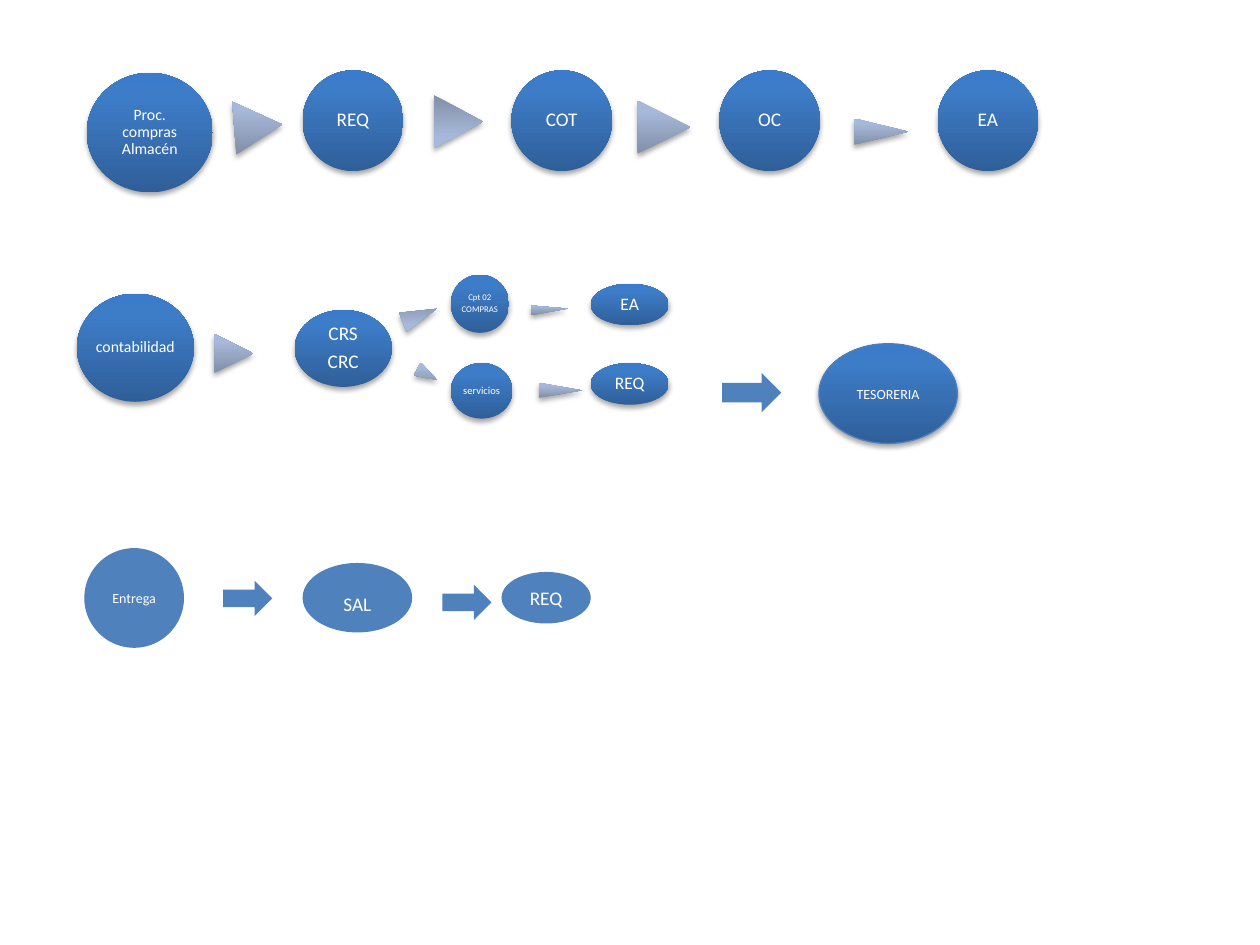
from lxml.etree import SubElement
from pptx import Presentation
from pptx.dml.color import RGBColor
from pptx.enum.shapes import MSO_SHAPE
from pptx.enum.text import MSO_ANCHOR, PP_ALIGN
from pptx.oxml import parse_xml
from pptx.oxml.ns import nsdecls, qn
from pptx.util import Cm, Pt

WHITE = RGBColor(0xFF, 0xFF, 0xFF)
BLACK = RGBColor(0x00, 0x00, 0x00)
BLUE = RGBColor(0x4F, 0x81, 0xBD)
OUTLINE = RGBColor(0x4B, 0x7E, 0xBC)
NODE_SHADES = (
    (0, RGBColor(0x2F, 0x5F, 0x99)),
    (80, RGBColor(0x3D, 0x7C, 0xC7)),
    (100, RGBColor(0x3A, 0x7C, 0xCB)),
)
POINTER_SHADES = (
    (0, RGBColor(0x81, 0x8F, 0xA8)),
    (80, RGBColor(0xA7, 0xB9, 0xDA)),
    (100, RGBColor(0xA7, 0xBA, 0xDC)),
)

STAGE_SIZE = 2.03
STAGE_TOP = 1.42
STAGES = (("REQ", 6.1), ("COT", 10.31), ("OC", 14.5), ("EA", 18.9))

GLOSSY_NODES = (
    (["Proc. compras Almacén"], (1.75, 1.47, 2.54, 2.41), 9),
    *(([name], (left, STAGE_TOP, STAGE_SIZE, STAGE_SIZE), 11) for name, left in STAGES),
    (["contabilidad"], (1.55, 5.92, 2.36, 2.18), 9),
    (["CRS", "CRC"], (5.94, 6.25, 1.96, 1.55), 11),
    (["Cpt 02", "COMPRAS"], (9.09, 5.54, 1.17, 1.17), 5),
    (["servicios"], (9.09, 7.32, 1.24, 1.12), 6),
    (["EA"], (11.91, 5.72, 1.57, 0.84), 10),
    (["REQ"], (11.91, 7.32, 1.57, 0.84), 10),
)

POINTERS = (
    ((4.67, 2.06, 1.07, 0.97), 85.5, False),
    ((8.71, 1.96, 1.07, 0.99), 270, True),
    ((12.85, 2.03, 1.07, 1.07), 90, False),
    ((17.5, 2.11, 0.53, 1.09), 90, False),
    ((4.32, 6.73, 0.79, 0.79), 90, False),
    ((8.26, 5.99, 0.41, 0.74), 248.5, True),
    ((8.46, 7.32, 0.3, 0.46), 118.9, False),
    ((10.97, 5.87, 0.2, 0.74), 87.2, False),
    ((11.15, 7.44, 0.3, 0.86), 90, False),
)

FLAT_NODES = (
    ("Entrega", (1.7, 11.05, 2.01, 2.01), 8, 0.03),
    ("SAL", (6.1, 11.35, 2.21, 1.4), 11, 0.27),
    ("REQ", (10.11, 11.53, 1.8, 1.04), 11, 0.03),
)

ARROWS = (
    (MSO_SHAPE.DOWN_ARROW, (14.76, 7.32, 0.79, 1.19), 270),
    (MSO_SHAPE.RIGHT_ARROW, (4.5, 11.71, 0.99, 0.71), 0),
    (MSO_SHAPE.RIGHT_ARROW, (8.92, 11.79, 0.99, 0.71), 0),
)


def add_flat(slide, kind, box, rotation=0):
    shape = slide.shapes.add_shape(kind, *(Cm(length) for length in box))
    shape.rotation = rotation
    shape.fill.solid()
    shape.fill.fore_color.rgb = BLUE
    shape.line.fill.background()
    shape.shadow.inherit = False
    return shape


def add_glossy(slide, kind, box, shades, rotation=0):
    shape = add_flat(slide, kind, box, rotation)
    properties = shape.element.spPr
    stops = "".join(
        f'<a:gs pos="{position * 1000}"><a:srgbClr val="{color}"/></a:gs>'
        for position, color in shades
    )
    gradient = parse_xml(
        f'<a:gradFill {nsdecls("a")} rotWithShape="0"><a:gsLst>{stops}</a:gsLst>'
        '<a:lin ang="16200000" scaled="0"/></a:gradFill>'
    )
    properties.replace(properties.find(qn("a:solidFill")), gradient)
    shadow = SubElement(
        properties.find(qn("a:effectLst")), qn("a:outerShdw"),
        blurRad=str(Pt(3.1)), dist=str(Pt(1.8)), dir="5400000", rotWithShape="0",
    )
    shade = SubElement(shadow, qn("a:srgbClr"), val=str(BLACK))
    SubElement(shade, qn("a:alpha"), val="35000")
    return shape


def write_label(shape, lines, size, spaced=False, top_inset=0.03):
    frame = shape.text_frame
    frame.word_wrap = True
    frame.vertical_anchor = MSO_ANCHOR.MIDDLE
    frame.margin_left = frame.margin_right = frame.margin_bottom = Cm(0.03)
    frame.margin_top = Cm(top_inset)
    for index, line in enumerate(lines):
        paragraph = frame.add_paragraph() if index else frame.paragraphs[0]
        paragraph.alignment = PP_ALIGN.CENTER
        if spaced:
            paragraph.line_spacing = 0.9
            paragraph.space_after = Pt(size * 0.35)
        run = paragraph.add_run()
        run.text = line
        run.font.name = "Calibri"
        run.font.size = Pt(size)
        run.font.color.rgb = WHITE


def add_pointer(slide, box, rotation, flipped):
    pointer = add_glossy(
        slide, MSO_SHAPE.ISOSCELES_TRIANGLE, box, POINTER_SHADES, rotation
    )
    if flipped:
        pointer.element.spPr.find(qn("a:xfrm")).set("flipV", "1")


def add_treasury(slide):
    treasury = add_glossy(
        slide, MSO_SHAPE.OVAL, (16.51, 6.93, 2.79, 2.01), NODE_SHADES
    )
    treasury.line.color.rgb = OUTLINE
    treasury.line.width = Pt(0.75)
    write_label(treasury, ["TESORERIA"], 8)


def main():
    presentation = Presentation()
    presentation.slide_width = Cm(25.4)
    presentation.slide_height = Cm(19.05)
    slide = presentation.slides.add_slide(presentation.slide_layouts[6])

    for box, rotation, flipped in POINTERS:
        add_pointer(slide, box, rotation, flipped)
    for lines, box, size in GLOSSY_NODES:
        node = add_glossy(slide, MSO_SHAPE.OVAL, box, NODE_SHADES)
        write_label(node, lines, size, spaced=True)
    add_treasury(slide)
    for name, box, size, top_inset in FLAT_NODES:
        node = add_flat(slide, MSO_SHAPE.OVAL, box)
        write_label(node, [name], size, top_inset=top_inset)
    for kind, box, rotation in ARROWS:
        add_flat(slide, kind, box, rotation)

    presentation.save("out.pptx")


if __name__ == "__main__":
    main()
